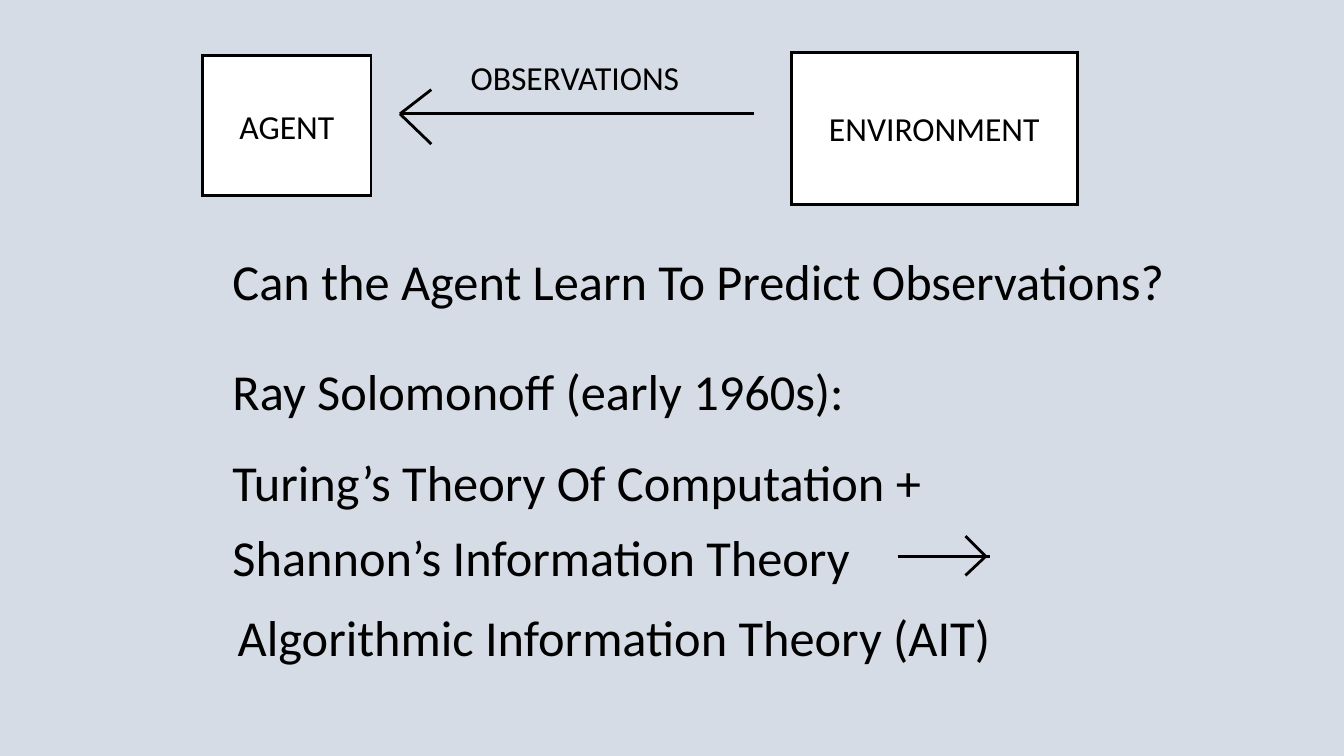
import pptx
import pptx.dml.color
import pptx.enum.shapes
import pptx.enum.text
import pptx.oxml.ns
import pptx.util
from lxml import etree

Cm = pptx.util.Cm
Pt = pptx.util.Pt
ANCHOR = pptx.enum.text.MSO_ANCHOR
ALIGN = pptx.enum.text.PP_ALIGN
AUTO_SIZE = pptx.enum.text.MSO_AUTO_SIZE

BACKDROP = pptx.dml.color.RGBColor(0xD6, 0xDC, 0xE5)
INK = pptx.dml.color.RGBColor(0x00, 0x00, 0x00)
PAPER = pptx.dml.color.RGBColor(0xFF, 0xFF, 0xFF)

ACTORS = [
    ("AGENT", (5.11, 1.4, 4.24, 3.53)),
    ("ENVIRONMENT", (19.94, 1.32, 7.21, 3.84)),
]
OBSERVATIONS = ("OBSERVATIONS", (11.61, 1.3, 5.87, 1.27))
STATEMENTS = [
    ("Can the Agent Learn To Predict Observations?", 5.61, 6.17, 24.13),
    ("Ray Solomonoff (early 1960s):", 5.61, 8.94, 16.1),
    ("Turing’s Theory Of Computation +", 5.61, 11.25, 18.0),
    ("Shannon’s Information Theory", 5.61, 13.13, 16.23),
    ("Algorithmic Information Theory (AIT)", 5.74, 15.14, 19.69),
]
STATEMENT_HEIGHT = 1.8
ARROWS = [
    {"y": 2.87, "start": 19.0, "end": 10.08, "tip": 10.08,
     "barbs": [(10.87, 2.26), (10.87, 3.63)]},
    {"y": 14.02, "start": 22.63, "end": 24.94, "tip": 24.84,
     "barbs": [(24.33, 13.51), (24.33, 14.5)]},
]
LABEL_SIZE, STATEMENT_SIZE = 24, 36
STROKE = {"width": Pt(2)}
ACTOR_FRAME = {"vertical_anchor": ANCHOR.MIDDLE, "word_wrap": True}
LABEL_FRAME = {"word_wrap": True, "auto_size": AUTO_SIZE.SHAPE_TO_FIT_TEXT}
STATEMENT_FRAME = {"word_wrap": False, "auto_size": AUTO_SIZE.SHAPE_TO_FIT_TEXT}


def apply(target, values):
    for name, value in values.items():
        setattr(target, name, value)


def write(shape, wording, size, frame, align):
    apply(shape.text_frame, frame)
    paragraph = shape.text_frame.paragraphs[0]
    paragraph.alignment = align
    run = paragraph.add_run()
    run.text = wording
    apply(run.font, {"name": "Calibri", "size": Pt(size)})
    run.font.color.rgb = INK


def ink_line(line):
    apply(line, STROKE)
    line.color.rgb = INK


def add_actor(slide, wording, box):
    actor = slide.shapes.add_shape(
        pptx.enum.shapes.MSO_SHAPE.RECTANGLE, *map(Cm, box))
    actor.shadow.inherit = False
    actor.fill.solid()
    actor.fill.fore_color.rgb = PAPER
    ink_line(actor.line)
    outline = actor._element.spPr.find(pptx.oxml.ns.qn("a:ln"))
    etree.SubElement(outline, pptx.oxml.ns.qn("a:miter"), lim="800000")
    write(actor, wording, LABEL_SIZE, ACTOR_FRAME, ALIGN.CENTER)


def add_words(slide, wording, box, size, frame):
    words = slide.shapes.add_textbox(*map(Cm, box))
    write(words, wording, size, frame, ALIGN.LEFT)


def add_stroke(slide, start, end):
    stroke = slide.shapes.add_connector(
        pptx.enum.shapes.MSO_CONNECTOR.STRAIGHT, *map(Cm, start + end))
    ink_line(stroke.line)
    etree.SubElement(stroke._element.spPr, pptx.oxml.ns.qn("a:effectLst"))


def add_arrow(slide, arrow):
    y = arrow["y"]
    add_stroke(slide, (arrow["start"], y), (arrow["end"], y))
    for barb in arrow["barbs"]:
        add_stroke(slide, (arrow["tip"], y), barb)


def main():
    deck = pptx.Presentation()
    apply(deck, {"slide_width": Cm(33.87), "slide_height": Cm(19.05)})
    slide = deck.slides.add_slide(deck.slide_layouts[6])
    slide.background.fill.solid()
    slide.background.fill.fore_color.rgb = BACKDROP

    for wording, box in ACTORS:
        add_actor(slide, wording, box)
    for arrow in ARROWS:
        add_arrow(slide, arrow)
    add_words(slide, *OBSERVATIONS, LABEL_SIZE, LABEL_FRAME)
    for wording, left, top, width in STATEMENTS:
        add_words(slide, wording, (left, top, width, STATEMENT_HEIGHT),
                  STATEMENT_SIZE, STATEMENT_FRAME)
    deck.save("out.pptx")


if __name__ == "__main__":
    main()
